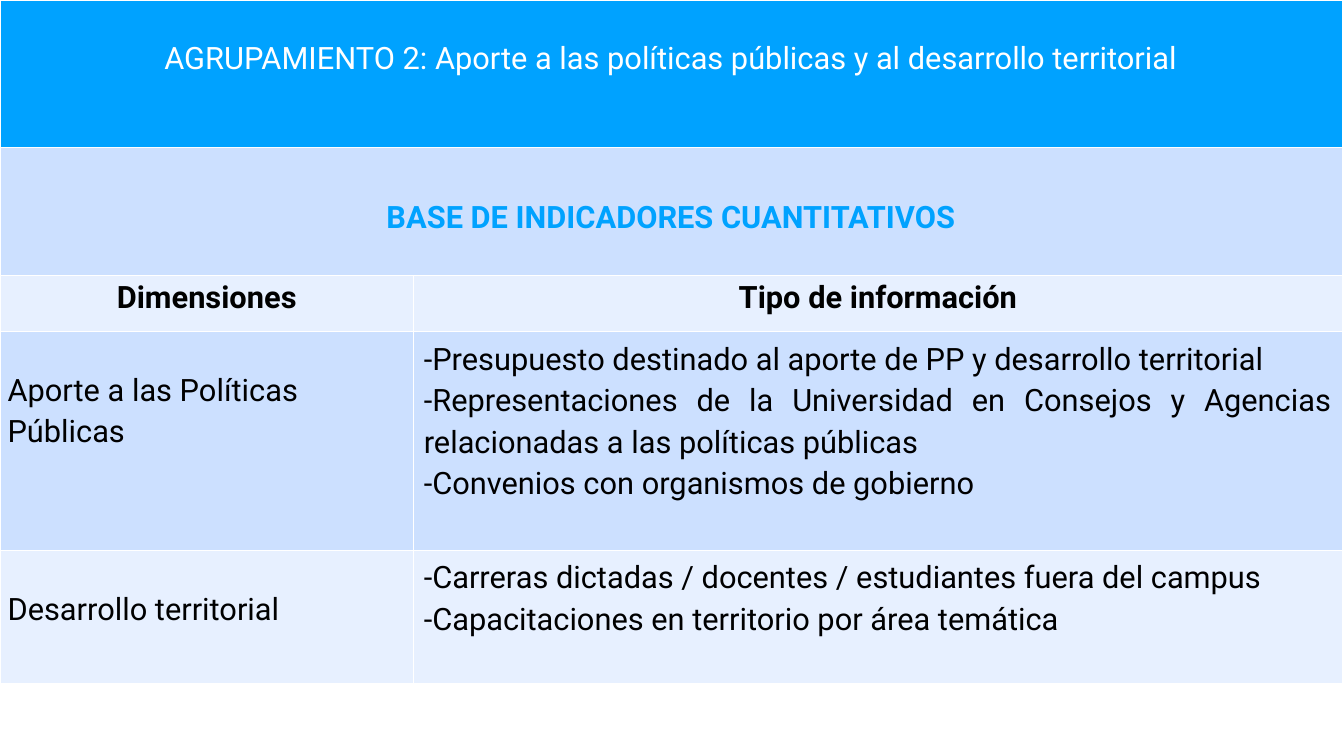
from lxml import etree
from pptx import Presentation
from pptx.dml.color import RGBColor
from pptx.enum.text import MSO_ANCHOR, PP_ALIGN
from pptx.oxml.ns import qn
from pptx.util import Inches, Pt

LEFT, MID, JUST = PP_ALIGN.LEFT, PP_ALIGN.CENTER, PP_ALIGN.JUSTIFY
TOP = MSO_ANCHOR.TOP
BLUE, DARK, PALE = "00A2FF", "CCE0FF", "E7F0FF"
WHITE, BLACK = "FFFFFF", "000000"

# Content: two banner rows, column heads, then dimension and its items
TITLE = "AGRUPAMIENTO 2: Aporte a las políticas públicas y al desarrollo territorial"
BASE = "BASE DE INDICADORES CUANTITATIVOS"
HEADS = ["Dimensiones", "Tipo de información"]
BODY = [
    ("Aporte a las Políticas Públicas", [
        "-Presupuesto destinado al aporte de PP y desarrollo territorial",
        "-Representaciones de la Universidad en Consejos y Agencias "
        "relacionadas a las políticas públicas",
        "-Convenios con organismos de gobierno",
    ]),
    ("Desarrollo territorial", [
        "-Carreras dictadas / docentes / estudiantes fuera del campus",
        "-Capacitaciones en territorio por área temática",
    ]),
]
COLS = [8.21, 18.43]
ROWS = [2.93, 2.53, 1.11, 4.34, 2.64]


def rgb(code):
    return RGBColor.from_string(code)


def edge(cell):
    """Draw a thin white line on all four sides."""
    props = cell._tc.get_or_add_tcPr()
    for side in ("lnL", "lnR", "lnT", "lnB"):
        line = etree.SubElement(props, qn("a:" + side), w=str(Pt(1)))
        fill = etree.SubElement(line, qn("a:solidFill"))
        etree.SubElement(fill, qn("a:srgbClr"), val=WHITE)


def put(cell, lines, fill, color=BLACK, bold=False, align=MID,
        top=0.1, side=0.2, gap=1.0):
    edge(cell)
    cell.fill.solid()
    cell.fill.fore_color.rgb = rgb(fill)
    cell.vertical_anchor = TOP
    cell.margin_left = cell.margin_right = Inches(side)
    cell.margin_top, cell.margin_bottom = Inches(top), Inches(0.1)
    cell.text_frame.text = "\n".join(lines)
    for para in cell.text_frame.paragraphs:
        para.alignment, para.line_spacing = align, gap
        font = para.font
        font.name, font.size, font.bold = "Roboto", Pt(44), bold
        font.color.rgb = rgb(color)


# Slide and table
deck = Presentation()
deck.slide_width, deck.slide_height = Inches(26.67), Inches(15)
slide = deck.slides.add_slide(deck.slide_layouts[6])
grid = slide.shapes.add_table(len(ROWS), len(COLS), 0, 0,
                              Inches(sum(COLS)), Inches(sum(ROWS))).table
for col, wide in zip(grid.columns, COLS):
    col.width = Inches(wide)
for row, high in zip(grid.rows, ROWS):
    row.height = Inches(high)

# Banner rows
for i in range(2):
    grid.cell(i, 0).merge(grid.cell(i, 1))
put(grid.cell(0, 0), [TITLE], BLUE, WHITE, top=0.82)
put(grid.cell(1, 0), [BASE], DARK, BLUE, bold=True, top=1.03)

# Column heads
for j, head in enumerate(HEADS):
    put(grid.cell(2, j), [head], PALE, bold=True)

# Dimensions and their items, in alternating bands
for i, (name, items) in enumerate(BODY):
    band = (DARK, PALE)[i % 2]
    put(grid.cell(3 + i, 0), [name], band, align=LEFT,
        top=0.72, side=0.15, gap=1.15)
    put(grid.cell(3 + i, 1), items, band, align=JUST, gap=1.15)

deck.save("out.pptx")
